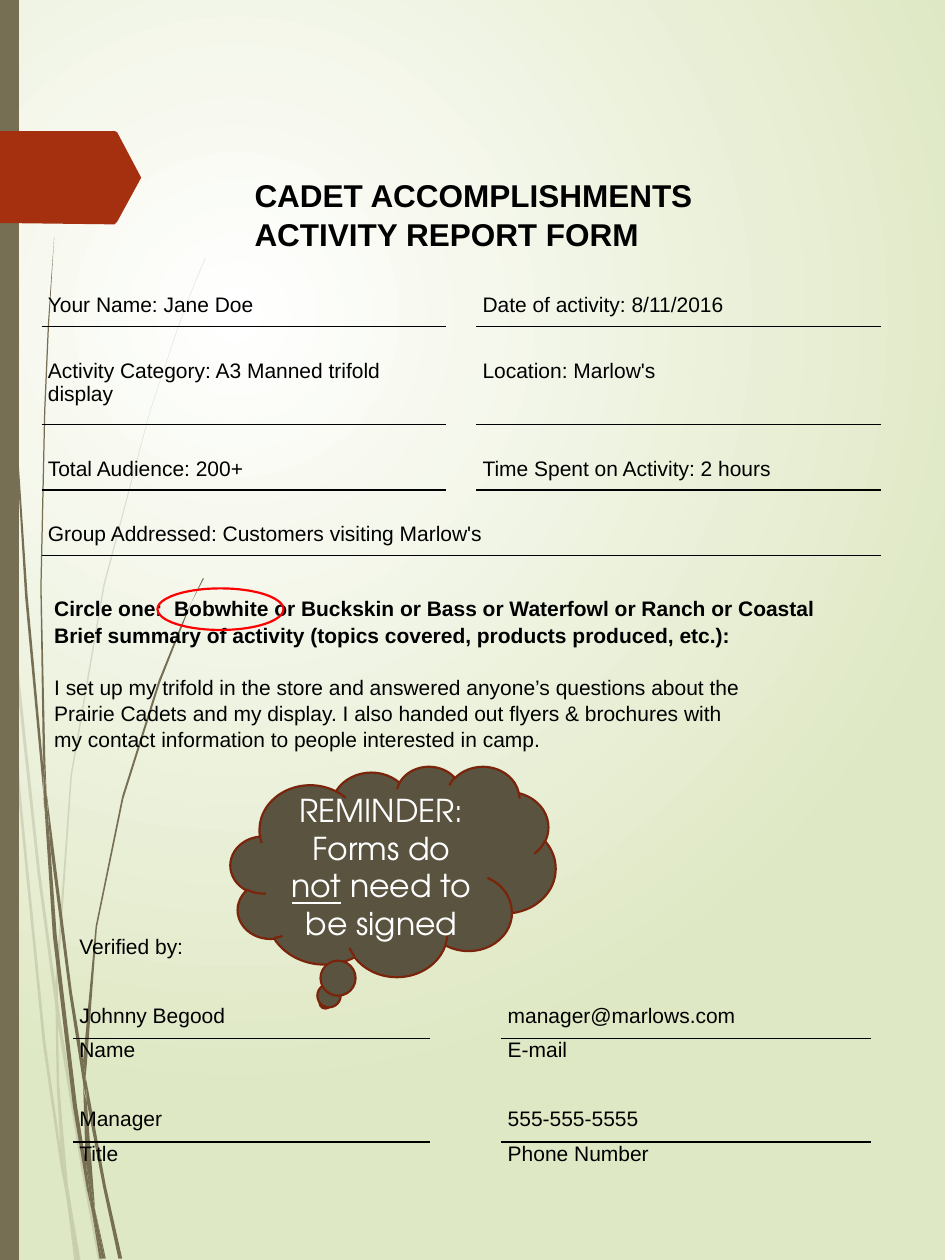
import pptx
import pptx.util
import pptx.dml.color
import pptx.enum.shapes
import pptx.enum.text
import pptx.oxml.ns
from lxml import etree

Inches, Pt = pptx.util.Inches, pptx.util.Pt
qn = pptx.oxml.ns.qn
MSO_SHAPE = pptx.enum.shapes.MSO_SHAPE
ANCHOR = pptx.enum.text.MSO_ANCHOR
ALIGN = pptx.enum.text.PP_ALIGN

WIDTH, HEIGHT = 7.5, 10
COLORS = {"text": "000000", "white": "FFFFFF", "sage": "DFE8C4", "stem": "766F54",
          "tag": "A53010", "cloud": "59533F", "cloud line": "7A240C", "ring": "FF0000"}
NO_STYLE = "{2D5ABB26-0587-4C30-8999-92F81FD0307C}"

# Content
TITLE = ["CADET ACCOMPLISHMENTS", "ACTIVITY REPORT FORM"]
SUMMARY = [
    "Circle one:  Bobwhite or Buckskin or Bass or Waterfowl or Ranch or Coastal",
    "Brief summary of activity (topics covered, products produced, etc.):",
    "I set up my trifold in the store and answered anyone’s questions about the\v"
    "Prairie Cadets and my display. I also handed out flyers & brochures with\v"
    "my contact information to people interested in camp."]
REMINDER = [("REMINDER:\vForms do ", False), ("not", True), (" need to be signed", False)]

# Form fields: row, first column, last column, text, ruled below
ACTIVITY = [
    (0, 0, 1, "Your Name: Jane Doe", True),
    (0, 3, 4, "Date of activity: 8/11/2016", True),
    (2, 0, 1, "Activity Category: A3 Manned trifold display", True),
    (2, 3, 4, "Location: Marlow's", True),
    (4, 0, 1, "Total Audience: 200+", True),
    (4, 3, 4, "Time Spent on Activity: 2 hours", True),
    (6, 0, 4, "Group Addressed: Customers visiting Marlow's", True)]
VERIFIED = [
    (0, 0, 0, "Verified by:", False),
    (2, 0, 0, "Johnny Begood", True), (2, 2, 2, "manager@marlows.com", True),
    (3, 0, 0, "Name", False), (3, 2, 2, "E-mail", False),
    (5, 0, 0, "Manager", True), (5, 2, 2, "555-555-5555", True),
    (6, 0, 0, "Title", False), (6, 2, 2, "Phone Number", False)]

# Grass blades and side tag: outline points in hundredths of an inch
PALE_BLADES = [
    [(6, 467), (4, 429), (0, 375), (0, 399), (5, 459)],
    [(30, 695), (44, 799), (44, 781), (32, 693), (7, 460), (9, 501)],
    [(48, 809), (46, 794), (46, 814), (64, 925), (78, 1001), (81, 1001), (66, 922)],
    [(62, 1001), (64, 1001), (55, 948)],
    [(48, 910), (36, 826), (16, 625), (9, 501), (6, 467), (14, 626), (34, 828), (48, 925),
     (53, 952), (52, 943)],
    [(4, 421), (4, 429), (7, 458), (7, 460), (6, 421), (3, 214), (5, 33), (4, 33), (2, 214)],
    [(44, 799), (45, 861), (48, 911), (50, 923), (55, 948), (54, 942), (47, 861), (46, 814),
     (46, 811)],
    [(46, 778), (57, 616), (83, 465), (119, 327), (140, 264), (151, 234), (163, 205), (163, 204),
     (151, 233), (140, 263), (119, 326), (82, 464), (56, 615), (44, 778), (44, 781), (46, 794)],
    [(53, 952), (59, 1001), (62, 1001)],
    [(46, 811), (46, 814), (46, 794), (44, 781), (44, 799)],
    [(50, 923), (48, 911), (52, 943), (53, 952), (62, 1001), (55, 948)]]
DARK_BLADES = [
    [(4, 147), (10, 310), (20, 474), (35, 636), (35, 642), (34, 610), (34, 604), (22, 473),
     (11, 310), (5, 146), (3, 64), (2, 0), (2, 64)],
    [(55, 789), (66, 860), (66, 842), (57, 787), (37, 629), (40, 673)],
    [(70, 865), (68, 855), (69, 875), (82, 943), (94, 999), (97, 999), (84, 941)],
    [(68, 922), (61, 877), (45, 742), (40, 673), (35, 636), (42, 743), (58, 879), (69, 944),
     (73, 962), (72, 956)],
    [(37, 629), (36, 604), (33, 466), (36, 326), (39, 257), (43, 188), (38, 257), (35, 326),
     (32, 466), (34, 599)],
    [(83, 999), (84, 999), (75, 958)],
    [(35, 637), (40, 674), (37, 630), (34, 599), (34, 605)],
    [(69, 844), (77, 736), (98, 634), (127, 542), (144, 499), (152, 478), (162, 459), (161, 459),
     (152, 478), (143, 498), (126, 540), (97, 632), (76, 735), (66, 842), (68, 855)],
    [(73, 962), (79, 999), (81, 999)],
    [(66, 860), (68, 922), (72, 941), (75, 958), (75, 954), (69, 875), (67, 868)],
    [(66, 860), (69, 875), (68, 855), (66, 842), (66, 845)],
    [(72, 941), (68, 922), (72, 956), (73, 962), (81, 999), (83, 999), (75, 958)]]
TAG = [(111, 143), (93, 176), (92, 177), (91, 178), (84, 178), (0, 177), (0, 104), (91, 104),
       (93, 105), (111, 139), (112, 141)]


def rgb(name):
    return pptx.dml.color.RGBColor.from_string(COLORS[name])


def paint(shape, fill=None, line=None):
    shape.shadow.inherit = False
    if fill:
        shape.fill.solid()
        shape.fill.fore_color.rgb = rgb(fill)
    else:
        shape.fill.background()
    if line:
        shape.line.color.rgb = rgb(line)
        shape.line.width = Pt(1.25)
    else:
        shape.line.fill.background()


def style(span, size, color="text", font="Arial", bold=False):
    span.font.name, span.font.size, span.font.bold = font, Pt(size), bold
    span.font.color.rgb = rgb(color)


def place(shape, *frame):
    shape.left, shape.top, shape.width, shape.height = map(Inches, frame)


def add_outline(shapes, points, fill, opacity=100):
    builder = shapes.build_freeform(*points[0], scale=Inches(0.01))
    builder.add_line_segments(points[1:], close=True)
    outline = builder.convert_to_shape()
    paint(outline, fill)
    if opacity < 100:
        color = outline.element.find(".//" + qn("a:srgbClr"))
        etree.SubElement(color, qn("a:alpha"), val=str(opacity * 1000))


def fill_placeholder(box, lines, frame, size, bold_lines):
    place(box, *frame)
    text_frame = box.text_frame
    text_frame.text = "\n".join(lines)
    text_frame.word_wrap = True
    text_frame.auto_size = pptx.enum.text.MSO_AUTO_SIZE.NONE
    text_frame.vertical_anchor = ANCHOR.TOP
    for index, para in enumerate(text_frame.paragraphs):
        para.alignment, para.line_spacing = ALIGN.LEFT, 1.05
        para.space_before = Pt(size * 1.2 if index == bold_lines else 0)
        props = para._p.get_or_add_pPr()
        props.set("marL", "0")
        props.set("indent", "0")
        etree.SubElement(props, qn("a:buNone"))
        for span in para.runs:
            style(span, size, bold=index < bold_lines)


def rule_below(cell):
    line = etree.Element(qn("a:lnB"), w=str(Pt(1)))
    solid = etree.SubElement(line, qn("a:solidFill"))
    etree.SubElement(solid, qn("a:srgbClr"), val=COLORS["text"])
    cell._tc.get_or_add_tcPr().insert(0, line)


def add_form(page, left, top, columns, rows, fields):
    frame = page.shapes.add_table(len(rows), len(columns), Inches(left), Inches(top),
                                  Inches(sum(columns)), Inches(sum(rows)))
    table = frame.table
    table.first_row = table.horz_banding = False
    table._tbl.tblPr.find(qn("a:tableStyleId")).text = NO_STYLE
    for column, width in zip(table.columns, columns):
        column.width = Inches(width)
    for row, height in zip(table.rows, rows):
        row.height = Inches(height)
    for cell in table.iter_cells():
        cell.fill.background()
        cell.margin_left = cell.margin_right = Inches(0.05)
        cell.margin_top = cell.margin_bottom = 0
        # Keeps empty rows as low as the others
        etree.SubElement(cell.text_frame.paragraphs[0]._p, qn("a:endParaRPr"), sz="1200")
    for row, first, last, text, ruled in fields:
        cell = table.cell(row, first)
        if last > first:
            cell.merge(table.cell(row, last))
        cell.text_frame.text = text
        style(cell.text_frame.paragraphs[0].runs[0], 12)
        if ruled:
            for column in range(first, last + 1):
                rule_below(table.cell(row, column))


def main():
    deck = pptx.Presentation()
    deck.slide_width, deck.slide_height = Inches(WIDTH), Inches(HEIGHT)
    page = deck.slides.add_slide(deck.slide_layouts[1])

    # Background glow
    fill = page.background.fill
    fill.gradient()
    for stop, name in zip(fill.gradient_stops, ("white", "sage")):
        stop.color.rgb = rgb(name)
    gradient = page.element.find(".//" + qn("a:gradFill"))
    gradient.remove(gradient.find(qn("a:lin")))
    glow = etree.SubElement(gradient, qn("a:path"), path="circle")
    etree.SubElement(glow, qn("a:fillToRect"), l="50000", t="50000", r="100000", b="100000")

    # Grass, side bar and tag
    for blades, opacity in ((PALE_BLADES, 20), (DARK_BLADES, 100)):
        group = page.shapes.add_group_shape()
        for points in blades:
            add_outline(group.shapes, points, "stem", opacity)
    bar = page.shapes.add_shape(MSO_SHAPE.RECTANGLE, 0, 0, Inches(WIDTH * 0.02), Inches(HEIGHT))
    paint(bar, "stem")
    add_outline(page.shapes, TAG, "tag")

    # Form tables
    add_form(page, 0.33, 2.33, [1.73, 1.48, 0.24, 1.96, 1.25],
             [0.52 if row == 2 else 0.26 for row in range(7)], ACTIVITY)
    add_form(page, 0.58, 7.42, [2.83, 0.57, 2.93], [1.92 / 7] * 7, VERIFIED)

    # Title and summary, in front of the grass
    title, body = page.placeholders
    fill_placeholder(body, SUMMARY, (0.33, 4.67, 6.67, 1.62), 12, 2)
    fill_placeholder(title, TITLE, (1.92, 1.33, 3.75, 0.71), 18, 2)
    for box in (body, title):
        page.shapes.element.append(box.element)

    # Reminder cloud
    cloud = page.shapes.add_shape(MSO_SHAPE.CLOUD_CALLOUT, 0, 0, 0, 0)
    place(cloud, 1.83, 6.08, 2.58, 1.67)
    paint(cloud, "cloud", "cloud line")
    cloud.text_frame.word_wrap = True
    cloud.text_frame.vertical_anchor = ANCHOR.MIDDLE
    para = cloud.text_frame.paragraphs[0]
    para.text = REMINDER[0][0]
    para.alignment = ALIGN.CENTER
    for text, underlined in REMINDER[1:]:
        span = para.add_run()
        span.text, span.font.underline = text, underlined
    for span in para.runs:
        style(span, 18, "white", "TeX Gyre Adventor")

    # Ring around the chosen camp
    ring = page.shapes.add_shape(MSO_SHAPE.OVAL, 0, 0, 0, 0)
    place(ring, 1.25, 4.67, 1, 0.33)
    paint(ring, line="ring")
    deck.save("out.pptx")


if __name__ == "__main__":
    main()
